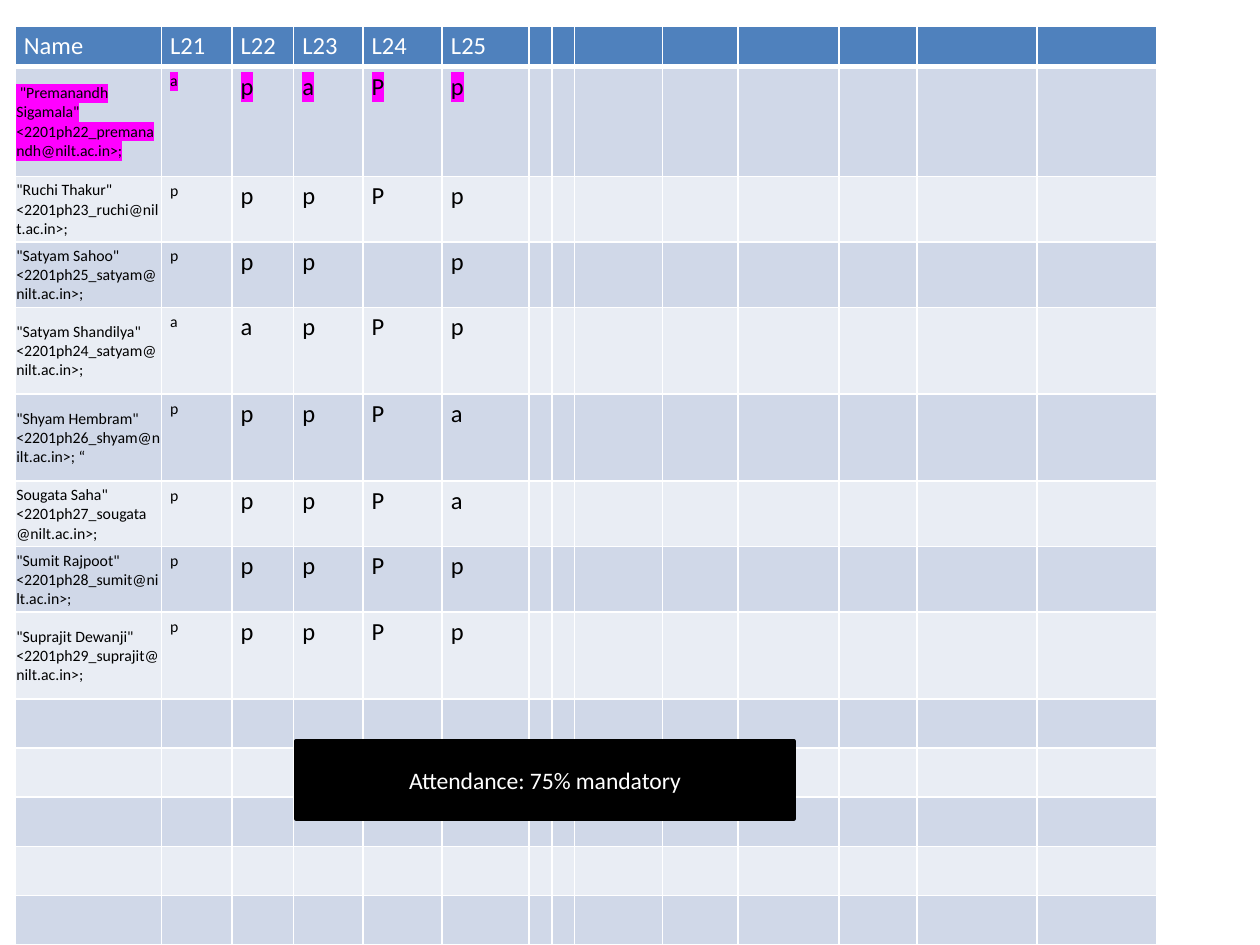
from dataclasses import dataclass
from lxml.etree import SubElement
from pptx import Presentation
from pptx.dml.color import RGBColor as Color
from pptx.enum.shapes import MSO_SHAPE as Shape
from pptx.enum.text import MSO_ANCHOR as Anchor, PP_ALIGN as Align
from pptx.oxml.ns import qn
from pptx.util import Inches, Pt


@dataclass(frozen=True)
class Theme:
    font: str = "Calibri"
    header: str = "4F81BD"
    bands: tuple = ("E9EDF4", "D0D8E8")
    light: str = "FFFFFF"
    dark: str = "000000"
    highlight: str = "FF00FF"
    small: float = 9
    banner: float = 13.5
    large: float = 14


theme = Theme()
presentation = Presentation()
presentation.slide_width = Inches(10)
presentation.slide_height = Inches(7.5)
slide = presentation.slides.add_slide(presentation.slide_layouts[6])


def across(percent):
    return round(presentation.slide_width * percent / 100)


def down(percent):
    return round(presentation.slide_height * percent / 100)


column_shares = [11.6, 5.6, 4.9, 5.5, 6.3, 6.9, 1.8, 1.8, 7, 6, 8, 6.2, 9.5, 9.5]
header_row, single, three_lines, roomy, four_lines = 4.27, 5.2, 6.93, 9.2, 11.6
students = [
    (' "Premanandh Sigamala" <2201ph22_premanandh@nilt.ac.in>;', "apaPp", four_lines),
    ('"Ruchi Thakur" <2201ph23_ruchi@nilt.ac.in>;', "pppPp", three_lines),
    ('"Satyam Sahoo" <2201ph25_satyam@nilt.ac.in>;', "ppp p", three_lines),
    ('"Satyam Shandilya" <2201ph24_satyam@nilt.ac.in>;', "aapPp", roomy),
    ('"Shyam Hembram" <2201ph26_shyam@nilt.ac.in>; “', "pppPa", roomy),
    ('Sougata Saha" <2201ph27_sougata@nilt.ac.in>;', "pppPa", three_lines),
    ('"Sumit Rajpoot" <2201ph28_sumit@nilt.ac.in>;', "pppPp", three_lines),
    ('"Suprajit Dewanji" <2201ph29_suprajit@nilt.ac.in>;', "pppPp", roomy),
]
empty_rows = 5
texts = [["Name", "L21", "L22", "L23", "L24", "L25"]]
texts += [[name, *marks] for name, marks, height in students]
texts += [[] for _ in range(empty_rows)]
row_shares = [header_row, *(height for name, marks, height in students)]
row_shares += [single] * empty_rows

table = slide.shapes.add_table(
    len(row_shares), len(column_shares), across(1.2), down(2.8),
    across(sum(column_shares)), down(sum(row_shares)),
).table
for column, share in zip(table.columns, column_shares):
    column.width = across(share)

for row_index, (row, share) in enumerate(zip(table.rows, row_shares)):
    row.height = down(share)
    is_header = row_index == 0
    is_student = 0 < row_index <= len(students)
    for column_index, cell in enumerate(row.cells):
        is_name = is_student and column_index == 0
        is_small = is_student and column_index < 2
        cell.margin_left = cell.margin_right = Inches(0.01 if is_name else 0.07)
        cell.margin_top = Inches(0.01 if is_name else 0.04)
        cell.margin_bottom = Inches(0 if is_name else 0.04)
        cell.vertical_anchor = Anchor.MIDDLE if is_name else Anchor.TOP

        properties = cell._tc.get_or_add_tcPr()
        for side in ("lnL", "lnR", "lnT", "lnB"):
            weight = 3 if is_header and side == "lnB" else 1
            border = SubElement(properties, qn(f"a:{side}"), w=str(Pt(weight)))
            border_fill = SubElement(border, qn("a:solidFill"))
            SubElement(border_fill, qn("a:srgbClr"), val=theme.light)
        cell.fill.solid()
        cell.fill.fore_color.rgb = Color.from_string(
            theme.header if is_header else theme.bands[row_index % 2])

        row_texts = texts[row_index]
        text = row_texts[column_index].rstrip() if column_index < len(row_texts) else ""
        size = theme.small if is_small else theme.large
        paragraph = cell.text_frame.paragraphs[0]
        if not text:
            paragraph._p.get_or_add_endParaRPr().set("sz", str(size * 100))
            continue
        paragraph.text = text
        font = paragraph.runs[0].font
        font.name = theme.font
        font.size = Pt(size)
        font.bold = False
        font.color.rgb = Color.from_string(theme.light if is_header else theme.dark)
        if row_index == 1:
            run_properties = paragraph.runs[0]._r.get_or_add_rPr()
            highlight = SubElement(run_properties, qn("a:highlight"))
            SubElement(highlight, qn("a:srgbClr"), val=theme.highlight)
            run_properties.find(qn("a:solidFill")).addnext(highlight)

banner = slide.shapes.add_shape(
    Shape.RECTANGLE, across(23.5), down(78.4), across(39.5), down(8.27))
banner.shadow.inherit = False
banner.fill.solid()
banner.fill.fore_color.rgb = Color.from_string(theme.dark)
banner.line.color.rgb = Color.from_string(theme.dark)
banner.line.width = Pt(2)
banner.text_frame.text = "Attendance: 75% mandatory"
banner.text_frame.word_wrap = True
banner.text_frame.vertical_anchor = Anchor.MIDDLE
paragraph = banner.text_frame.paragraphs[0]
paragraph.alignment = Align.CENTER
font = paragraph.runs[0].font
font.name = theme.font
font.size = Pt(theme.banner)
font.color.rgb = Color.from_string(theme.light)

presentation.save("out.pptx")
